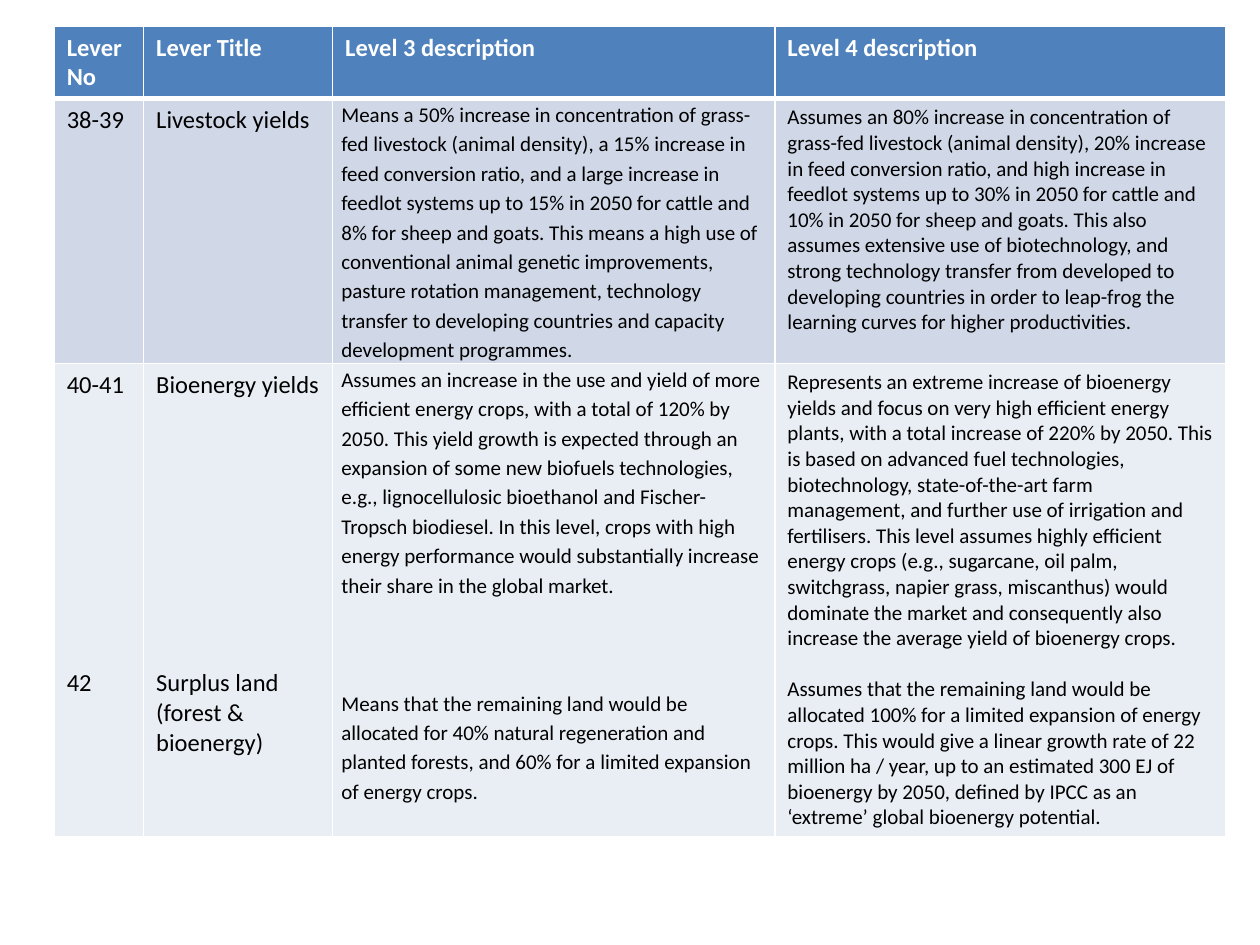
import pptx
import pptx.dml.color
import pptx.oxml
import pptx.oxml.ns
import pptx.util
from pptx.util import Inches

RGBColor = pptx.dml.color.RGBColor
WHITE = RGBColor(0xFF, 0xFF, 0xFF)
BLACK = RGBColor(0x00, 0x00, 0x00)
HEADER_BLUE = RGBColor(0x4F, 0x81, 0xBD)
BAND_DARK = RGBColor(0xD0, 0xD8, 0xE8)
BAND_LIGHT = RGBColor(0xE9, 0xED, 0xF4)
ROW_FILLS = [HEADER_BLUE, BAND_DARK, BAND_LIGHT]

COLUMN_WIDTHS = [0.71, 1.5, 3.51, 3.58]
ROW_HEIGHTS = [0.55, 2.1, 3.69]
LEVEL_3 = 2
TEXT_SIZES = [14, 14, 12, 12]
TOPIC_GAPS = [153.5, 153.5, 50.5, 14.6]

LEVERS = [
    [["Lever No"], ["Lever Title"], ["Level 3 description"], ["Level 4 description"]],
    [
        ["38-39"],
        ["Livestock yields"],
        ["Means a 50% increase in concentration of grass-fed livestock (animal density), "
         "a 15% increase in feed conversion ratio, and a large increase in feedlot systems "
         "up to 15% in 2050 for cattle and 8% for sheep and goats. This means a high use of "
         "conventional animal genetic improvements, pasture rotation management, technology "
         "transfer to developing countries and capacity development programmes."],
        ["Assumes an 80% increase in concentration of grass-fed livestock (animal density), "
         "20% increase in feed conversion ratio, and high increase in feedlot systems up to "
         "30% in 2050 for cattle and 10% in 2050 for sheep and goats. This also assumes "
         "extensive use of biotechnology, and strong technology transfer from developed to "
         "developing countries in order to leap-frog the learning curves for higher "
         "productivities."],
    ],
    [
        ["40-41", "42"],
        ["Bioenergy yields", "Surplus land (forest & bioenergy)"],
        ["Assumes an increase in the use and yield of more efficient energy crops, with a "
         "total of 120% by 2050. This yield growth is expected through an expansion of some "
         "new biofuels technologies, e.g., lignocellulosic bioethanol and Fischer-Tropsch "
         "biodiesel. In this level, crops with high energy performance would substantially "
         "increase their share in the global market.",
         "Means that the remaining land would be allocated for 40% natural regeneration and "
         "planted forests, and 60% for a limited expansion of energy crops."],
        ["Represents an extreme increase of bioenergy yields and focus on very high efficient "
         "energy plants, with a total increase of 220% by 2050. This is based on advanced "
         "fuel technologies, biotechnology, state-of-the-art farm management, and further "
         "use of irrigation and fertilisers. This level assumes highly efficient energy "
         "crops (e.g., sugarcane, oil palm, switchgrass, napier grass, miscanthus) would "
         "dominate the market and consequently also increase the average yield of bioenergy "
         "crops.",
         "Assumes that the remaining land would be allocated 100% for a limited expansion of "
         "energy crops. This would give a linear growth rate of 22 million ha / year, up to "
         "an estimated 300 EJ of bioenergy by 2050, defined by IPCC as an ‘extreme’ global "
         "bioenergy potential."],
    ],
]


def apply_format(target, values):
    for name, value in values.items():
        setattr(target, name, value)


class SlideBuilder:
    font_name = "Calibri"
    tight_margins = {
        "margin_left": Inches(0.07), "margin_right": Inches(0.07),
        "margin_top": 0, "margin_bottom": 0,
    }

    def __init__(self, deck):
        self.page = deck.slides.add_slide(deck.slide_layouts[6])

    def add_lever_table(self, left, top, rows):
        table = self.page.shapes.add_table(
            len(rows), len(COLUMN_WIDTHS), Inches(left), Inches(top),
            Inches(sum(COLUMN_WIDTHS)), Inches(sum(ROW_HEIGHTS))).table
        for column, width in zip(table.columns, COLUMN_WIDTHS):
            column.width = Inches(width)
        for row, height in zip(table.rows, ROW_HEIGHTS):
            row.height = Inches(height)
        for row_index, row in enumerate(rows):
            for column_index, texts in enumerate(row):
                self.fill_cell(table.cell(row_index, column_index), texts,
                               row_index, column_index)

    def fill_cell(self, cell, texts, row_index, column_index):
        is_header = row_index == 0
        is_tight = column_index == LEVEL_3 and not is_header
        cell.fill.solid()
        cell.fill.fore_color.rgb = ROW_FILLS[row_index]
        self.add_borders(cell, {
            "lnL": 1, "lnR": 1,
            "lnT": 3 if row_index == 1 else 1,
            "lnB": 3 if is_header else 1,
        })
        if is_tight:
            apply_format(cell, self.tight_margins)
        font_values = {
            "name": self.font_name,
            "size": pptx.util.Pt(14 if is_header else TEXT_SIZES[column_index]),
            "bold": is_header,
        }
        for index, text in enumerate(texts):
            frame = cell.text_frame
            para = frame.add_paragraph() if index else frame.paragraphs[0]
            if index:
                para.space_before = pptx.util.Pt(TOPIC_GAPS[column_index])
            if is_tight:
                para.line_spacing = 1.15
            span = para.add_run()
            span.text = text
            apply_format(span.font, font_values)
            span.font.color.rgb = WHITE if is_header else BLACK

    def add_borders(self, cell, widths):
        properties = cell._tc.get_or_add_tcPr()
        for position, (side, points) in enumerate(widths.items()):
            line = pptx.oxml.parse_xml(
                f'<a:{side} {pptx.oxml.ns.nsdecls("a")} w="{pptx.util.Pt(points)}">'
                f'<a:solidFill><a:srgbClr val="{WHITE}"/></a:solidFill></a:{side}>')
            properties.insert(position, line)


def main():
    deck = pptx.Presentation()
    apply_format(deck, {"slide_width": Inches(10), "slide_height": Inches(7.5)})
    SlideBuilder(deck).add_lever_table(0.43, 0.21, LEVERS)
    deck.save("out.pptx")


if __name__ == "__main__":
    main()
